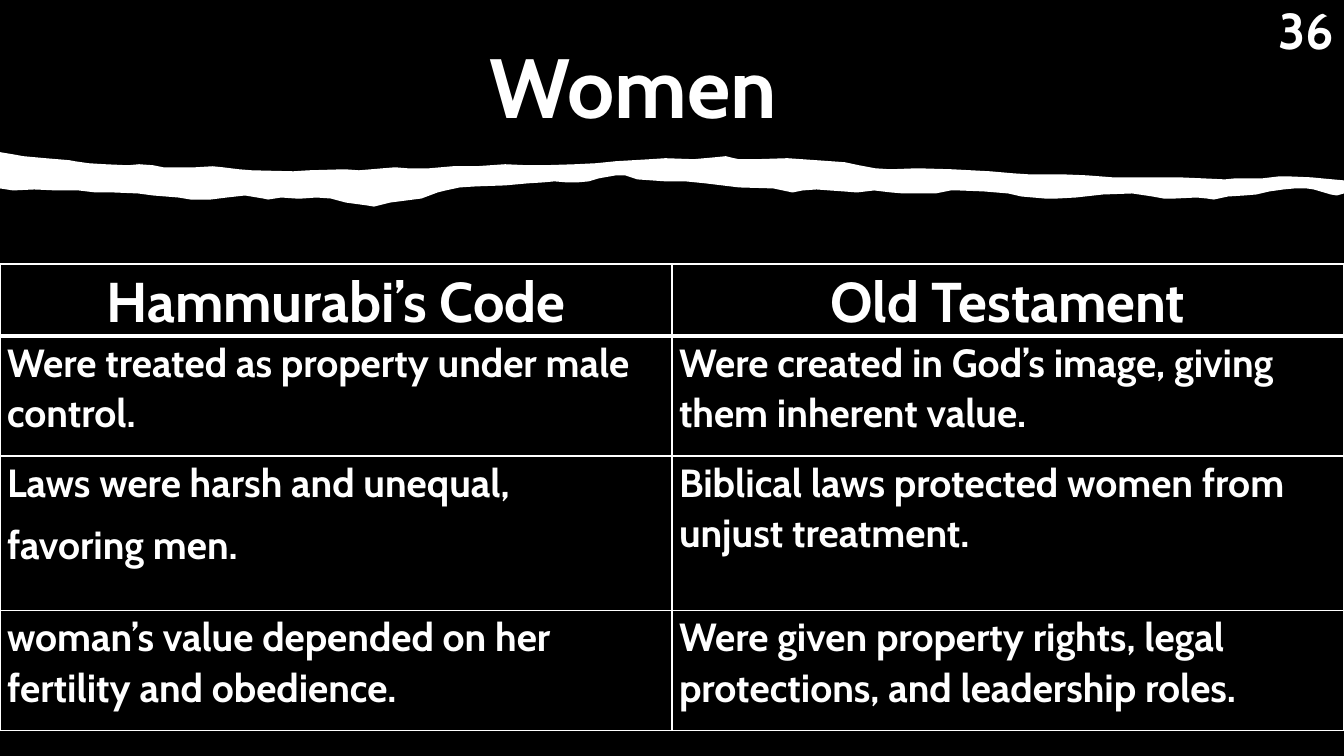
from dataclasses import dataclass

from lxml import etree
from pptx import Presentation
from pptx.dml.color import RGBColor
from pptx.enum.text import MSO_ANCHOR, PP_ALIGN
from pptx.oxml.ns import qn
from pptx.util import Inches, Pt

LEFT, CENTER, RIGHT = PP_ALIGN.LEFT, PP_ALIGN.CENTER, PP_ALIGN.RIGHT
TOP = MSO_ANCHOR.TOP
BLANK_LAYOUT = 6
SLIDE_WIDTH, SLIDE_HEIGHT = Inches(13.33), Inches(7.5)


@dataclass(frozen=True)
class Theme:
    """Colours, font and type sizes of the slide."""

    background: str = "000000"
    ink: str = "FFFFFF"
    font: str = "Cabin"
    title: int = 60
    heading: int = 40
    number: int = 36
    body: int = 28
    rule: int = 1
    heading_rule: int = 3


THEME = Theme()

HEADINGS = ["Hammurabi’s Code", "Old Testament"]
COMPARISONS = [
    ["Were treated as property under male control.",
     "Were created in God’s image, giving them inherent value."],
    ["Laws were harsh and unequal,\nfavoring men.",
     "Biblical laws protected women from unjust treatment."],
    ["woman’s value depended on her fertility and obedience.",
     "Were given property rights, legal protections, and leadership roles."],
]
ROW_SHARES = [8.53, 15.87, 20.4, 15.87]

TEAR_UNIT = Inches(0.01)
TEAR_UPPER_EDGE = [
    (0, 151), (12, 153), (23, 155), (45, 157), (69, 159), (74, 160),
    (88, 162), (104, 163), (127, 164), (138, 163), (152, 164), (162, 166),
    (174, 166), (194, 166), (211, 165), (221, 166), (237, 168), (250, 169),
    (291, 170), (306, 169), (342, 168), (356, 169), (380, 167), (392, 166),
    (404, 167), (426, 167), (449, 165), (472, 165), (501, 163), (524, 164),
    (539, 164), (571, 163), (591, 162), (611, 160), (645, 158), (660, 157),
    (688, 158), (710, 156), (720, 155), (728, 157), (733, 158), (750, 158),
    (781, 157), (810, 159), (824, 160), (838, 161), (852, 164), (868, 167),
    (883, 168), (910, 167), (944, 168), (982, 170), (1005, 172), (1020, 173),
    (1053, 173), (1078, 174), (1104, 176), (1170, 176), (1193, 177),
    (1215, 178), (1225, 177), (1252, 177), (1269, 175), (1277, 175),
    (1301, 176), (1311, 177), (1333, 179),
]
TEAR_LOWER_EDGE = [
    (1333, 192), (1326, 194), (1320, 193), (1303, 188), (1296, 187),
    (1284, 187), (1273, 188), (1259, 190), (1246, 193), (1234, 194),
    (1218, 195), (1204, 198), (1197, 197), (1187, 196), (1166, 197),
    (1154, 197), (1143, 195), (1123, 192), (1094, 193), (1067, 196),
    (1049, 197), (1036, 197), (1013, 195), (1000, 192), (976, 190),
    (951, 189), (943, 189), (928, 192), (909, 192), (896, 192), (884, 191),
    (867, 189), (850, 191), (837, 190), (823, 189), (810, 188), (796, 189),
    (786, 191), (767, 187), (733, 186), (700, 182), (680, 180), (660, 180),
    (632, 178), (620, 174), (611, 174), (594, 177), (584, 180), (573, 181),
    (562, 181), (550, 180), (539, 181), (523, 182), (501, 184), (472, 185),
    (456, 186), (442, 189), (434, 191), (418, 197), (395, 200), (387, 201),
    (371, 205), (365, 204), (343, 201), (328, 197), (314, 196), (300, 197),
    (293, 197), (279, 196), (266, 198), (261, 197), (243, 194), (225, 196),
    (209, 198), (189, 198), (177, 196), (152, 194), (137, 192), (113, 191),
    (95, 191), (78, 189), (56, 189), (34, 188), (13, 189), (0, 187),
]


def across(share):
    """Return a percentage of the slide width as a length."""
    return round(SLIDE_WIDTH * share / 100)


def down(share):
    """Return a percentage of the slide height as a length."""
    return round(SLIDE_HEIGHT * share / 100)


def write_text(frame, text, size, alignment, line_spacing=1.0, space_after=0):
    """Write each line of text as one formatted paragraph."""
    for index, line in enumerate(text.split("\n")):
        paragraph = frame.add_paragraph() if index else frame.paragraphs[0]
        paragraph.alignment = alignment
        paragraph.line_spacing = line_spacing
        paragraph.space_after = Pt(space_after)
        run = paragraph.add_run()
        run.text = line
        run.font.name = THEME.font
        run.font.size = Pt(size)
        run.font.bold = True
        run.font.color.rgb = RGBColor.from_string(THEME.ink)


def add_label(slide, box, text, size, alignment, line_spacing=1.0):
    """Add a text box placed by shares of the slide."""
    left, top, width, height = box
    shape = slide.shapes.add_textbox(
        across(left), down(top), across(width), down(height))
    shape.text_frame.word_wrap = True
    shape.text_frame.vertical_anchor = TOP
    write_text(shape.text_frame, text, size, alignment, line_spacing)


def add_torn_strip(slide):
    """Add the ragged strip that divides the title from the table."""
    start, *points = TEAR_UPPER_EDGE + TEAR_LOWER_EDGE
    builder = slide.shapes.build_freeform(*start, scale=TEAR_UNIT)
    builder.add_line_segments(points, close=True)
    shape = builder.convert_to_shape()
    shape.shadow.inherit = False
    shape.fill.solid()
    shape.fill.fore_color.rgb = RGBColor.from_string(THEME.ink)
    shape.line.fill.background()


def set_borders(cell, top, bottom):
    """Draw the four cell borders with the given top and bottom widths."""
    properties = cell._tc.get_or_add_tcPr()
    widths = {"lnL": THEME.rule, "lnR": THEME.rule, "lnT": top, "lnB": bottom}
    for side, width in widths.items():
        line = etree.SubElement(properties, qn(f"a:{side}"), w=str(Pt(width)))
        fill = etree.SubElement(line, qn("a:solidFill"))
        etree.SubElement(fill, qn("a:srgbClr"), val=THEME.ink)


def fill_cell(cell, text, row):
    """Format and fill a cell according to its row."""
    heading = row == 0
    cell.margin_left = cell.margin_right = Inches(0.07)
    cell.margin_top = cell.margin_bottom = 0
    set_borders(
        cell,
        top=THEME.heading_rule if row == 1 else THEME.rule,
        bottom=THEME.heading_rule if heading else THEME.rule)
    cell.fill.solid()
    cell.fill.fore_color.rgb = RGBColor.from_string(THEME.background)
    write_text(
        cell.text_frame, text,
        THEME.heading if heading else THEME.body,
        CENTER if heading else LEFT,
        line_spacing=1.07, space_after=8)


def add_comparison_table(slide):
    """Add the two-column comparison across the full slide width."""
    rows = [HEADINGS, *COMPARISONS]
    table = slide.shapes.add_table(
        len(rows), len(HEADINGS), 0, down(34.93),
        SLIDE_WIDTH, down(sum(ROW_SHARES))).table
    table.first_row = table.horz_banding = False
    for row, (texts, share) in enumerate(zip(rows, ROW_SHARES)):
        table.rows[row].height = down(share)
        for column, text in enumerate(texts):
            fill_cell(table.cell(row, column), text, row)


def main():
    """Build and save the slide."""
    presentation = Presentation()
    presentation.slide_width = SLIDE_WIDTH
    presentation.slide_height = SLIDE_HEIGHT
    slide = presentation.slides.add_slide(
        presentation.slide_layouts[BLANK_LAYOUT])
    slide.background.fill.solid()
    slide.background.fill.fore_color.rgb = RGBColor.from_string(THEME.background)
    add_torn_strip(slide)
    add_label(slide, (22.5, 3.87, 49.2, 14.8), "Women", THEME.title, CENTER)
    add_comparison_table(slide)
    add_label(slide, (93.7, 0.13, 6.3, 10), "36", THEME.number, RIGHT, 0.9)
    presentation.save("out.pptx")


if __name__ == "__main__":
    main()
